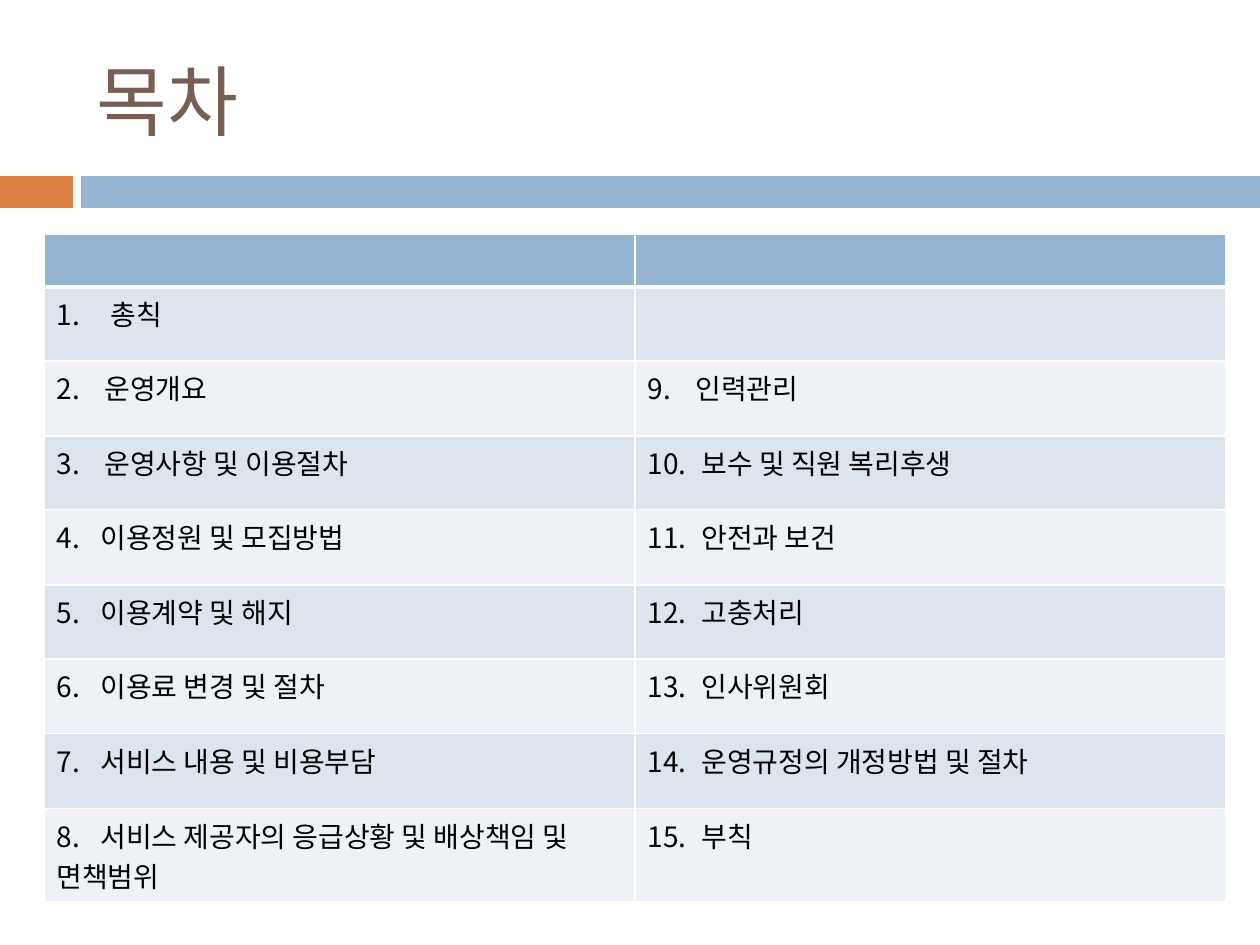
from lxml.etree import SubElement
from pptx import Presentation
from pptx.dml.color import RGBColor
from pptx.enum.shapes import MSO_SHAPE
from pptx.enum.text import MSO_ANCHOR
from pptx.oxml.ns import qn
from pptx.util import Pt

EMU_PER_PX = 914400 / 126
FONT = "Noto Sans CJK KR"
COLORS = {
    "title": "775F55",
    "accent": "DD8047",
    "band": "94B6D2",
    "odd": "DCE5EE",
    "even": "EEF1F6",
    "line": "FFFFFF",
    "text": "000000",
}
LEFT_ITEMS = [
    " 총칙", "운영개요", "운영사항 및 이용절차", "이용정원 및 모집방법",
    "이용계약 및 해지", "이용료 변경 및 절차", "서비스 내용 및 비용부담",
    "서비스 제공자의 응급상황 및 배상책임 및 면책범위",
]
RIGHT_ITEMS = [
    "인력관리", "보수 및 직원 복리후생", "안전과 보건", "고충처리",
    "인사위원회", "운영규정의 개정방법 및 절차", "부칙",
]
AUTO_NUMBERED = {1, 2, 3, 9}
ROW_HEIGHTS = [53] + [74, 75] * 3 + [75, 93]
COLUMN_WIDTH = 591
NUMBER_INDENT = 48


def px(value):
    return round(value * EMU_PER_PX)


def color(name):
    return RGBColor.from_string(COLORS[name])


def style_span(span, size, color_name):
    span.font.size = Pt(size)
    span.font.color.rgb = color(color_name)
    span.font.name = FONT
    SubElement(span._r.get_or_add_rPr(), qn("a:ea"), typeface=FONT)


def add_bar(page, left, width, color_name):
    bar = page.shapes.add_shape(
        MSO_SHAPE.RECTANGLE, px(left), px(176), px(width), px(32))
    bar.shadow.inherit = False
    bar.fill.solid()
    bar.fill.fore_color.rgb = color(color_name)
    bar.line.fill.background()


def add_title(page, text):
    box = page.shapes.add_textbox(px(84), px(32), px(1124), px(136))
    frame = box.text_frame
    frame.word_wrap = True
    frame.vertical_anchor = MSO_ANCHOR.MIDDLE
    frame.text = text
    style_span(frame.paragraphs[0].runs[0], 44, "title")


def style_cell(cell, row):
    properties = cell._tc.get_or_add_tcPr()
    widths = {
        "lnL": 1,
        "lnR": 1,
        "lnT": 3 if row == 1 else 1,
        "lnB": 3 if row == 0 else 1,
    }
    for side, width in widths.items():
        border = SubElement(properties, qn(f"a:{side}"), w=str(Pt(width)))
        fill = SubElement(border, qn("a:solidFill"))
        SubElement(fill, qn("a:srgbClr"), val=COLORS["line"])
    cell.fill.solid()
    name = "band" if row == 0 else "odd" if row % 2 else "even"
    cell.fill.fore_color.rgb = color(name)


def write_item(cell, number, text):
    paragraph = cell.text_frame.paragraphs[0]
    properties = paragraph._p.get_or_add_pPr()
    if number in AUTO_NUMBERED:
        properties.set("marL", str(px(NUMBER_INDENT)))
        properties.set("indent", str(-px(NUMBER_INDENT)))
        SubElement(properties, qn("a:buAutoNum"),
                   type="arabicPeriod", startAt=str(number))
        paragraph.text = text
    else:
        stops = SubElement(properties, qn("a:tabLst"))
        stop = 44 if number < 10 else 54
        SubElement(stops, qn("a:tab"), pos=str(px(stop)), algn="l")
        paragraph.text = f"{number}.\t{text}"
    for span in paragraph.runs:
        style_span(span, 16, "text")


def add_contents_table(page):
    table = page.shapes.add_table(
        len(ROW_HEIGHTS), 2, px(44), px(234),
        px(2 * COLUMN_WIDTH), px(sum(ROW_HEIGHTS))).table
    for column in table.columns:
        column.width = px(COLUMN_WIDTH)
    for row, height in enumerate(ROW_HEIGHTS):
        table.rows[row].height = px(height)
        for column in range(2):
            style_cell(table.cell(row, column), row)
    for number, text in enumerate(LEFT_ITEMS, 1):
        write_item(table.cell(number, 0), number, text)
    for row, text in enumerate(RIGHT_ITEMS, 2):
        write_item(table.cell(row, 1), row + 7, text)


def main():
    deck = Presentation()
    deck.slide_width, deck.slide_height = px(1260), px(945)
    page = deck.slides.add_slide(deck.slide_layouts[6])
    add_bar(page, 0, 73, "accent")
    add_bar(page, 81, 1179, "band")
    add_title(page, "목차")
    add_contents_table(page)
    deck.save("out.pptx")


if __name__ == "__main__":
    main()
